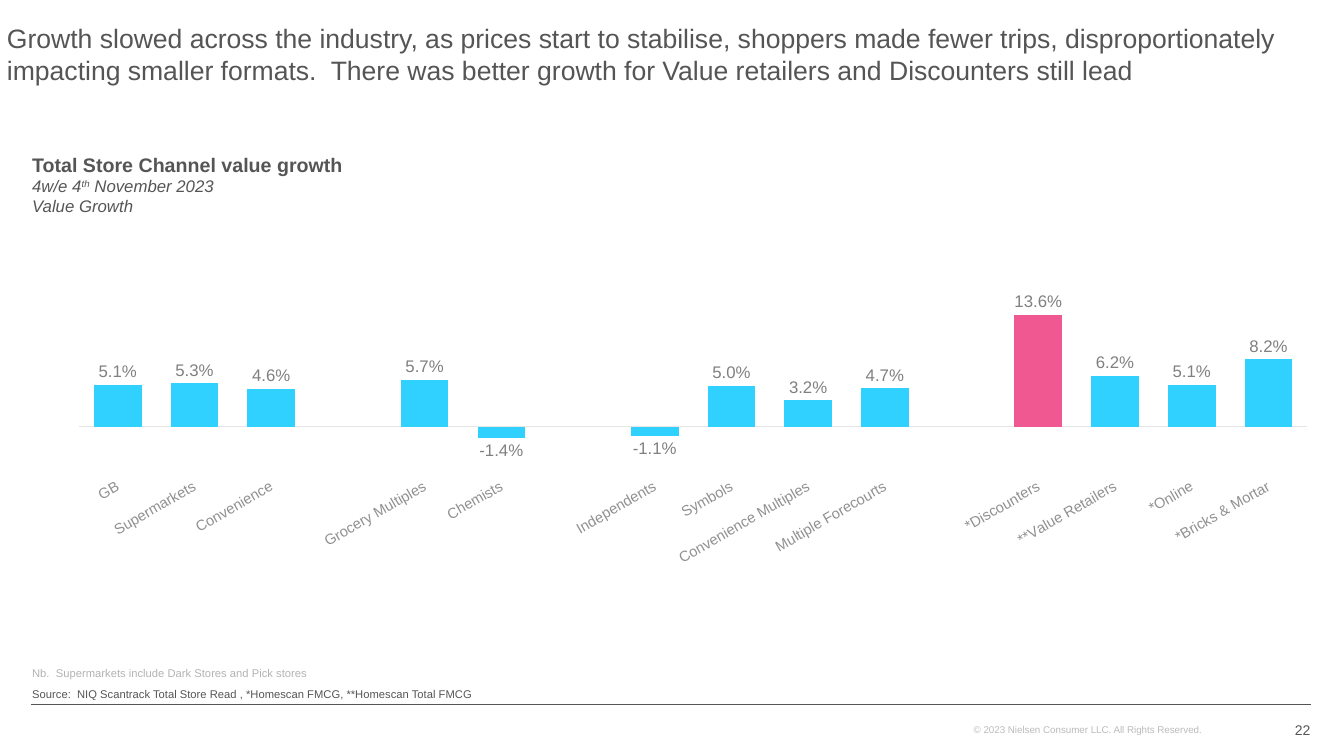
from dataclasses import dataclass

from lxml.etree import SubElement
from pptx import Presentation
from pptx.chart.data import CategoryChartData
from pptx.dml.color import RGBColor
from pptx.enum.chart import XL_CHART_TYPE, XL_LABEL_POSITION, XL_TICK_LABEL_POSITION, XL_TICK_MARK
from pptx.enum.shapes import MSO_CONNECTOR
from pptx.enum.text import MSO_ANCHOR, MSO_AUTO_SIZE, PP_ALIGN
from pptx.oxml import parse_xml
from pptx.oxml.ns import nsdecls, qn
from pptx.util import Pt


@dataclass(frozen=True)
class Theme:
    font: str = "Arial"
    ink: str = "555555"
    note: str = "B3B3B3"
    copyright: str = "BBBBBB"
    axis_text: str = "909090"
    axis_line: str = "E6E6E6"
    label: str = "808080"
    bar: str = "30D1FF"
    highlight: str = "EF5890"
    title_size: float = 19
    heading_size: float = 14
    label_size: float = 12
    axis_size: float = 10.5
    number_size: float = 10
    source_size: float = 8
    copyright_size: float = 7


THEME = Theme()
TITLE = (
    "Growth slowed across the industry, as prices start to stabilise, shoppers made fewer trips, "
    "disproportionately impacting smaller formats.  There was better growth for Value retailers "
    "and Discounters still lead"
)
HEADING = "Total Store Channel value growth"
PERIOD = [("4w/e 4", False), ("th", True), (" November 2023", False)]
MEASURE = "Value Growth"
NOTE = "Nb.  Supermarkets include Dark Stores and Pick stores"
SOURCE = "Source:  NIQ Scantrack Total Store Read , *Homescan FMCG, **Homescan Total FMCG"
COPYRIGHT = "© 2023 Nielsen Consumer LLC. All Rights Reserved."
PAGE_NUMBER = "22"
HIGHLIGHTED = "*Discounters"
CHANNEL_GROUPS = [
    [("GB", 0.051), ("Supermarkets", 0.053), ("Convenience", 0.046)],
    [("Grocery Multiples", 0.057), ("Chemists", -0.014)],
    [("Independents", -0.011), ("Symbols", 0.05), ("Convenience Multiples", 0.032),
     ("Multiple Forecourts", 0.047)],
    [(HIGHLIGHTED, 0.136), ("**Value Retailers", 0.062), ("*Online", 0.051),
     ("*Bricks & Mortar", 0.082)],
]
PLOT_LAYOUT = {"x": 0.037, "y": 0.015, "w": 0.961, "h": 0.629}
LEFT, WIDTH = 23, 912.3


def color(value):
    return RGBColor.from_string(value)


def style_font(font, size, value, bold=False, italic=False):
    font.name, font.size = THEME.font, Pt(size)
    font.bold, font.italic = bold, italic
    font.color.rgb = color(value)


def place(shape, box, anchor):
    shape.left, shape.top, shape.width, shape.height = map(Pt, box)
    frame = shape.text_frame
    frame.word_wrap, frame.auto_size = True, MSO_AUTO_SIZE.NONE
    frame.vertical_anchor = anchor
    frame.margin_left = frame.margin_right = 0
    frame.margin_top = frame.margin_bottom = Pt(3.6)
    return frame


def write(shape, box, text, size, value, anchor=MSO_ANCHOR.TOP, align=PP_ALIGN.LEFT):
    frame = place(shape, box, anchor)
    frame.text = text
    paragraph = frame.paragraphs[0]
    paragraph.alignment, paragraph.space_before = align, Pt(0)
    style_font(paragraph.runs[0].font, size, value)
    return paragraph


def add_text_box(slide):
    return slide.shapes.add_textbox(0, 0, 0, 0)


def add_heading(slide):
    frame = place(add_text_box(slide), (LEFT, 105.1, 426, 53.3), MSO_ANCHOR.MIDDLE)
    frame.text = HEADING
    style_font(frame.paragraphs[0].runs[0].font, THEME.heading_size, THEME.ink, bold=True)
    for parts in (PERIOD, [(MEASURE, False)]):
        paragraph = frame.add_paragraph()
        for text, raised in parts:
            run = paragraph.add_run()
            run.text = text
            style_font(run.font, THEME.label_size, THEME.ink, italic=True)
            if raised:
                run.font._element.set("baseline", "30000")


def set_plot_layout(chart):
    plot_area = chart._chartSpace.chart.plotArea
    for previous in plot_area.findall(qn("c:layout")):
        plot_area.remove(previous)
    layout = parse_xml(f"<c:layout {nsdecls('c')}><c:manualLayout/></c:layout>")
    settings = {"layoutTarget": "inner", "xMode": "edge", "yMode": "edge", **PLOT_LAYOUT}
    for name, value in settings.items():
        SubElement(layout[0], qn(f"c:{name}")).set("val", str(value))
    plot_area.insert(0, layout)


def add_growth_chart(slide):
    bars = list(CHANNEL_GROUPS[0])
    for group in CHANNEL_GROUPS[1:]:
        bars += [("", None), *group]
    names, values = zip(*bars)
    data = CategoryChartData(number_format="0.0%")
    data.categories = names
    data.add_series("Value Growth", values)
    chart = slide.shapes.add_chart(
        XL_CHART_TYPE.COLUMN_CLUSTERED, Pt(LEFT), Pt(123.8), Pt(WIDTH), Pt(326.9), data
    ).chart
    chart.has_title = chart.has_legend = False
    style_font(chart.font, THEME.number_size, THEME.ink)
    set_plot_layout(chart)

    value_axis = chart.value_axis
    value_axis.minimum_scale, value_axis.maximum_scale = -0.05, 0.3
    value_axis.has_major_gridlines = value_axis.visible = False

    category_axis = chart.category_axis
    category_axis.tick_label_position = XL_TICK_LABEL_POSITION.LOW
    category_axis.major_tick_mark = category_axis.minor_tick_mark = XL_TICK_MARK.NONE
    category_axis.format.line.color.rgb = color(THEME.axis_line)
    category_axis.format.line.width = Pt(0.75)
    style_font(category_axis.tick_labels.font, THEME.axis_size, THEME.axis_text)
    category_axis._element.find(f"{qn('c:txPr')}/{qn('a:bodyPr')}").set("rot", "-1800000")

    plot = chart.plots[0]
    plot.gap_width, plot.overlap, plot.vary_by_categories = 61, -30, False
    series = plot.series[0]
    series.invert_if_negative = False
    for target, value in ((series, THEME.bar),
                          (series.points[names.index(HIGHLIGHTED)], THEME.highlight)):
        target.format.fill.solid()
        target.format.fill.fore_color.rgb = color(value)
    labels = series.data_labels
    labels.show_value, labels.position = True, XL_LABEL_POSITION.OUTSIDE_END
    labels.number_format, labels.number_format_is_linked = "0.0%", False
    style_font(labels.font, THEME.label_size, THEME.label)


def add_footer_rule(slide):
    rule = slide.shapes.add_connector(
        MSO_CONNECTOR.STRAIGHT, Pt(22.5), Pt(503.3), Pt(936.7), Pt(503.3)
    )
    rule.line.color.rgb, rule.line.width = color(THEME.ink), Pt(1)
    SubElement(rule._element.spPr, qn("a:effectLst"))


def main():
    """Build the store channel value growth slide."""
    presentation = Presentation()
    presentation.slide_width, presentation.slide_height = Pt(960), Pt(540)
    slide = presentation.slides.add_slide(presentation.slide_layouts[1])
    add_footer_rule(slide)
    write(add_text_box(slide), (695.5, 513.4, 204.5, 15.8), COPYRIGHT,
          THEME.copyright_size, THEME.copyright)
    write(add_text_box(slide), (864.7, 506.9, 71.3, 28.8), PAGE_NUMBER,
          THEME.number_size, THEME.ink, MSO_ANCHOR.MIDDLE, PP_ALIGN.RIGHT)
    write(slide.shapes.title, (5, 23, 955, 31), TITLE,
          THEME.title_size, THEME.ink, MSO_ANCHOR.MIDDLE)
    source = write(slide.placeholders[1], (LEFT, 487.4, WIDTH, 34.6), SOURCE,
                   THEME.source_size, THEME.ink)
    properties = source._p.get_or_add_pPr()
    properties.set("marL", "0")
    properties.set("indent", "0")
    SubElement(properties, qn("a:buNone"))
    add_growth_chart(slide)
    add_heading(slide)
    write(add_text_box(slide), (LEFT, 471.6, 213, 17.3), NOTE,
          THEME.source_size, THEME.note, MSO_ANCHOR.BOTTOM)
    presentation.save("out.pptx")


if __name__ == "__main__":
    main()
